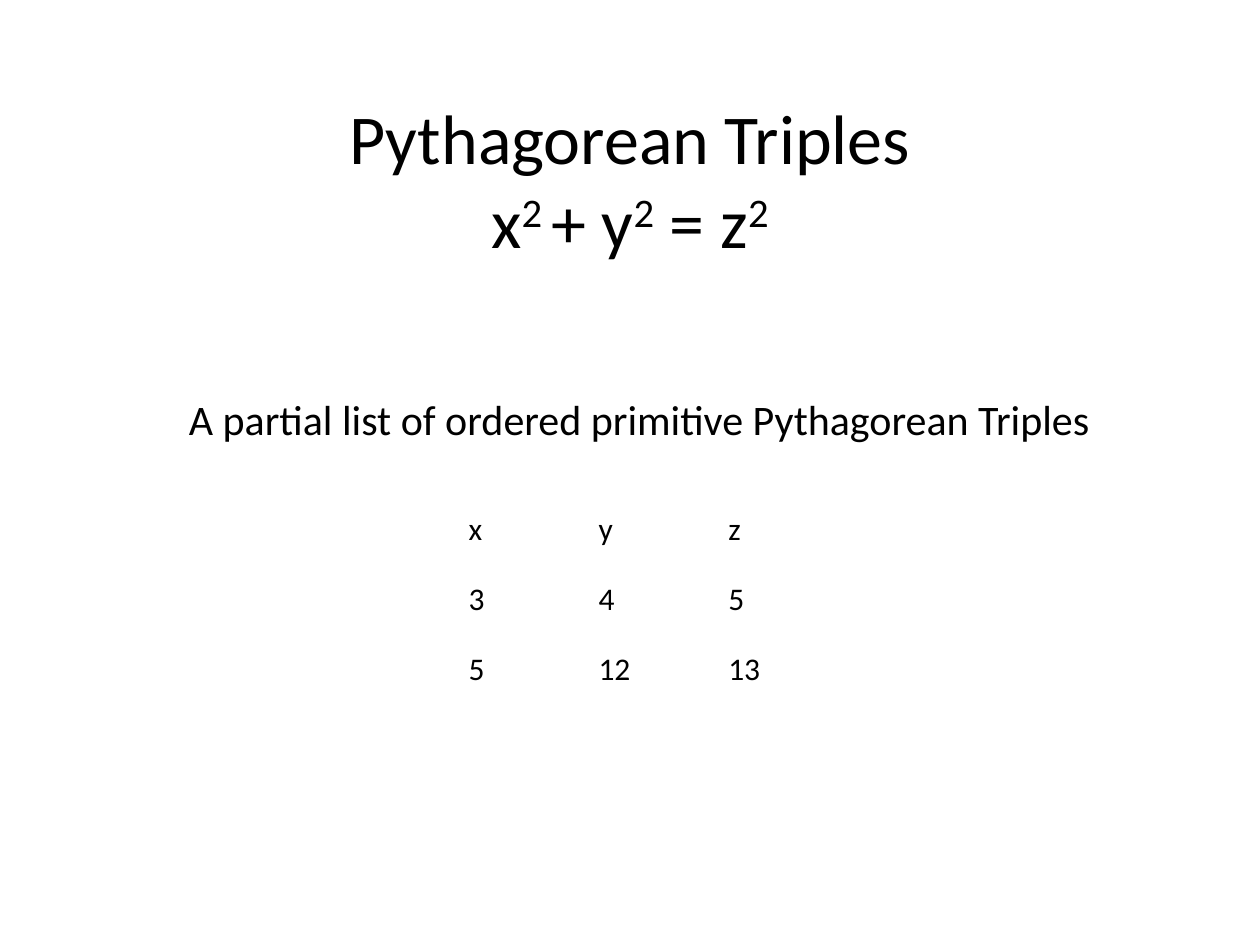
import dataclasses

import pptx
import pptx.dml.color
import pptx.enum.text
import pptx.util

WIDTH, HEIGHT = pptx.util.Inches(10), pptx.util.Inches(7.5)
COLUMN, ROW = WIDTH / 100, HEIGHT / 75  # grid unit: a tenth of an inch


@dataclasses.dataclass(frozen=True)
class Theme:
    font: str = "Calibri"
    ink: str = "000000"
    paper: str = "FFFFFF"
    title: float = 40
    subtitle: float = 24
    cell: float = 18


THEME = Theme()

TITLE = "Pythagorean Triples"
EQUATION = [("x", False), ("2 ", True), ("+ y", False), ("2", True),
            (" = z", False), ("2", True)]
SUBTITLE = "A partial list of ordered primitive Pythagorean Triples"
TRIPLES = [("x", "y", "z"), ("3", "4", "5"), ("5", "12", "13")]


def across(columns):
    return round(columns * COLUMN)


def down(rows):
    return round(rows * ROW)


def add_span(para, text, size, raised=False):
    """Add one run; a raised run is a superscript."""
    span = para.add_run()
    span.text = text
    span.font.name = THEME.font
    span.font.size = pptx.util.Pt(size)
    span.font.color.rgb = pptx.dml.color.RGBColor.from_string(THEME.ink)
    if raised:
        span._r.get_or_add_rPr().set("baseline", "30000")


def add_centred_box(page, left, top, width, height):
    """Add a wrapping text box and return its frame and first paragraph."""
    box = page.shapes.add_textbox(across(left), down(top), across(width), down(height))
    frame = box.text_frame
    frame.word_wrap = True
    para = frame.paragraphs[0]
    para.alignment = pptx.enum.text.PP_ALIGN.CENTER
    return frame, para


def add_title(page):
    frame, para = add_centred_box(page, 7.5, 5.8, 85, 16.8)
    frame.vertical_anchor = pptx.enum.text.MSO_ANCHOR.MIDDLE
    add_span(para, TITLE, THEME.title)
    para.add_line_break()
    for text, raised in EQUATION:
        add_span(para, text, THEME.title, raised)


def add_subtitle(page):
    frame, para = add_centred_box(page, 6.1, 27.3, 90.9, 29.4)
    frame.margin_top = down(3.9)
    frame.margin_right = across(2.6)
    add_span(para, SUBTITLE, THEME.subtitle)


def add_triples_table(page, left, top, column_widths, row_height):
    table = page.shapes.add_table(
        len(TRIPLES), len(column_widths), across(left), down(top),
        across(sum(column_widths)), down(row_height * len(TRIPLES))).table
    table.first_row = table.horz_banding = False
    for column, width in zip(table.columns, column_widths):
        column.width = across(width)
    for row, triple in zip(table.rows, TRIPLES):
        row.height = down(row_height)
        for cell, text in zip(row.cells, triple):
            cell.fill.background()
            add_span(cell.text_frame.paragraphs[0], text, THEME.cell)


def main():
    deck = pptx.Presentation()
    deck.slide_width, deck.slide_height = WIDTH, HEIGHT
    page = deck.slides.add_slide(deck.slide_layouts[6])
    page.background.fill.solid()
    page.background.fill.fore_color.rgb = pptx.dml.color.RGBColor.from_string(THEME.paper)
    add_title(page)
    add_subtitle(page)
    add_triples_table(page, 36.2, 40, (10.3, 10.3, 6.5), 5.56)
    deck.save("out.pptx")


if __name__ == "__main__":
    main()
